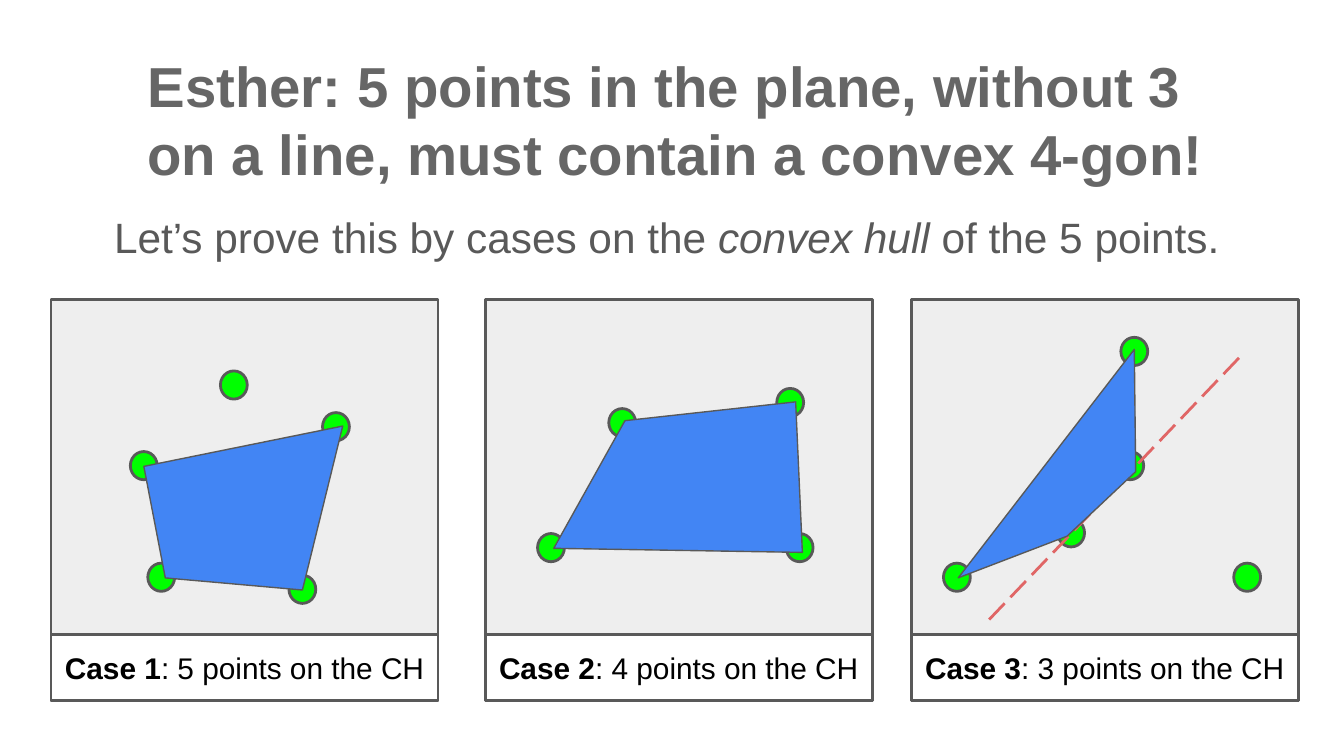
from pptx import Presentation
from pptx.dml.color import RGBColor
from pptx.enum.dml import MSO_LINE
from pptx.enum.shapes import MSO_CONNECTOR, MSO_SHAPE as SHAPE
from pptx.enum.text import MSO_ANCHOR, PP_ALIGN
from pptx.oxml.ns import qn
from pptx.util import Inches, Pt
from lxml import etree


def paint(shape, fill, width=1.5):
    shape.shadow.inherit = False
    shape.fill.solid()
    shape.fill.fore_color.rgb = RGBColor.from_string(fill)
    shape.line.color.rgb = RGBColor.from_string("595959")
    shape.line.width = Pt(width)


def write(box, lines, size, color):
    frame = box.text_frame
    frame.word_wrap = True
    frame.margin_left = frame.margin_right = Inches(0.1)
    frame.margin_top = frame.margin_bottom = Inches(0.1)
    for number, pieces in enumerate(lines):
        para = frame.add_paragraph() if number else frame.paragraphs[0]
        for text, bold, italic in pieces:
            span = para.add_run()
            span.text = text
            span.font.name = "Arial"
            span.font.size = Pt(size)
            span.font.bold = bold
            span.font.italic = italic
            span.font.color.rgb = RGBColor.from_string(color)
    return frame


deck = Presentation()
deck.slide_width = Inches(10)
deck.slide_height = Inches(10) * 9 // 16
page = deck.slides.add_slide(deck.slide_layouts[6])

title = page.shapes.add_textbox(Inches(1), Inches(0.28), Inches(9.56), Inches(0.62))
title_lines = [
    [("Esther: 5 points in the plane, without 3", True, False)],
    [("on a line, must contain a convex 4-gon!", True, False)],
]
write(title, title_lines, 30.2, "666666")

subtitle = page.shapes.add_textbox(Inches(0.75), Inches(1.5), Inches(9.11), Inches(0.46))
subtitle_line = [
    ("Let’s prove this by cases on the ", False, False),
    ("convex hull", False, True),
    (" of the 5 points.", False, False),
]
para = write(subtitle, [subtitle_line], 22.7, "595959").paragraphs[0]
para.line_spacing = 0.95
para.space_after = Pt(12)

cases = [
    (0.38, "Case 1", ": 5 points on the CH",
     [(2.4, 3.07), (1.64, 2.76), (0.97, 3.36), (1.1, 4.19), (2.15, 4.28)]),
    (3.61, "Case 2", ": 4 points on the CH",
     [(4.99, 3.54), (5.78, 2.89), (4.53, 3.04), (4, 3.97), (5.85, 3.97)]),
    (6.78, "Case 3", ": 3 points on the CH",
     [(8.31, 3.36), (8.34, 2.51), (7.87, 3.86), (7.02, 4.19), (9.18, 4.19)]),
]
for left, name, caption, points in cases:
    shapes = page.shapes.add_group_shape().shapes
    panel = shapes.add_shape(SHAPE.RECTANGLE, Inches(left), Inches(2.23), Inches(2.88), Inches(2.98))
    paint(panel, "EEEEEE")
    label = shapes.add_shape(SHAPE.RECTANGLE, Inches(left), Inches(4.72), Inches(2.88), Inches(0.49))
    paint(label, "FFFFFF")
    frame = write(label, [[(name, True, False), (caption, False, False)]], 16, "000000")
    frame.vertical_anchor = MSO_ANCHOR.MIDDLE
    frame.paragraphs[0].alignment = PP_ALIGN.CENTER
    for x, y in points:
        point = shapes.add_shape(SHAPE.OVAL, Inches(x), Inches(y), Inches(0.2), Inches(0.21))
        paint(point, "00FF00")

divider = page.shapes.add_connector(
    MSO_CONNECTOR.STRAIGHT, Inches(7.36), Inches(4.61), Inches(9.26), Inches(2.62))
divider.line.color.rgb = RGBColor.from_string("E06666")
divider.line.width = Pt(1.5)
divider.line.dash_style = MSO_LINE.LONG_DASH
etree.SubElement(divider._element.spPr, qn("a:effectLst"))

quadrilaterals = [
    [(1.23, 4.3), (1.07, 3.47), (2.55, 3.17), (2.25, 4.39)],
    [(4.12, 4.08), (4.65, 3.13), (5.92, 2.99), (5.97, 4.11)],
    [(7.13, 4.3), (8.44, 2.6), (8.45, 3.51), (7.94, 3.99)],
]
for corners in quadrilaterals:
    start, *others = [(Inches(x), Inches(y)) for x, y in corners]
    outline = page.shapes.build_freeform(*start)
    outline.add_line_segments(others, close=True)
    paint(outline.convert_to_shape(), "4285F4", 0.75)

deck.save("out.pptx")
